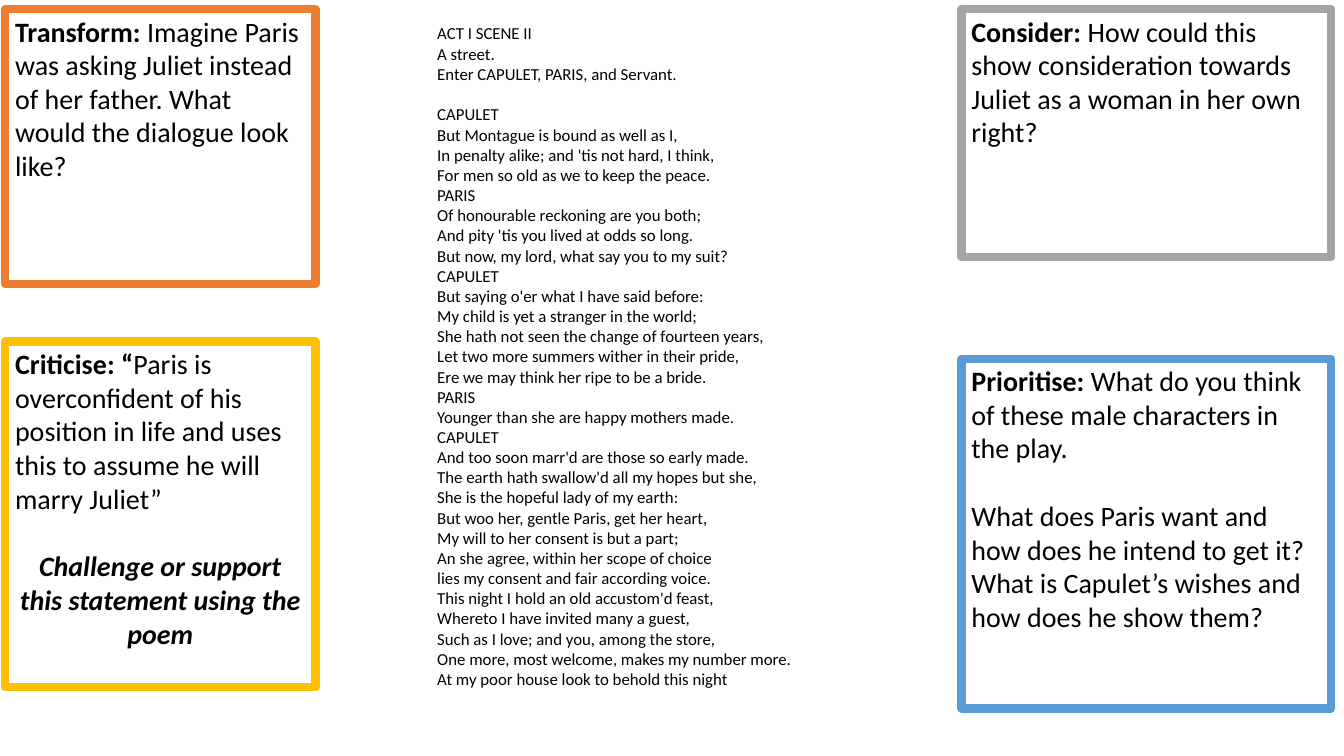
from pptx import Presentation
from pptx.dml.color import RGBColor
from pptx.enum.shapes import MSO_SHAPE
from pptx.enum.text import MSO_ANCHOR, MSO_AUTO_SIZE, PP_ALIGN
from pptx.util import Cm, Pt

COLORS = {
    "text": "000000", "paper": "FFFFFF", "transform": "ED7D31",
    "consider": "A5A5A5", "criticise": "FFC000", "prioritise": "5B9BD5",
}
FONT = "Calibri"
TASK_SIZE, SCENE_SIZE = 20, 12
LINE = 1.22  # line height of the font, in ems

# Column: left edge and width in cm
LEFT, RIGHT = (0.13, 7.82), (24.23, 9.32)

# Colour, column, top, height, heading, question, further paragraphs, closing call
TASKS = [
    ("transform", LEFT, 0.23, 6.93, "Transform: ",
     "Imagine Paris was asking Juliet instead of her father. "
     "What would the dialogue look like?", [], ""),
    ("consider", RIGHT, 0.23, 6.25, "Consider: ",
     "How could this show consideration towards Juliet as a woman "
     "in her own right?", [], ""),
    ("criticise", LEFT, 8.61, 8.71, "Criticise: “",
     "Paris is overconfident of his position in life and uses this "
     "to assume he will marry Juliet”", [],
     "Challenge or support this statement using the poem"),
    ("prioritise", RIGHT, 9.04, 8.81, "Prioritise: ",
     "What do you think of these male characters in the play.",
     ["What does Paris want and how does he intend to get it?",
      "What is Capulet’s wishes and how does he show them?"], ""),
]

SCENE_BOX = (10.77, 0.46, 9.68, 17.2)
OPENING = ["ACT I SCENE II", "A street.", "Enter CAPULET, PARIS, and Servant."]
SPEECHES = [
    ("CAPULET", [
        "But Montague is bound as well as I,",
        "In penalty alike; and 'tis not hard, I think,",
        "For men so old as we to keep the peace."]),
    ("PARIS", [
        "Of honourable reckoning are you both;",
        "And pity 'tis you lived at odds so long.",
        "But now, my lord, what say you to my suit?"]),
    ("CAPULET", [
        "But saying o'er what I have said before:",
        "My child is yet a stranger in the world;",
        "She hath not seen the change of fourteen years,",
        "Let two more summers wither in their pride,",
        "Ere we may think her ripe to be a bride."]),
    ("PARIS", ["Younger than she are happy mothers made."]),
    ("CAPULET", [
        "And too soon marr'd are those so early made.",
        "The earth hath swallow'd all my hopes but she,",
        "She is the hopeful lady of my earth:",
        "But woo her, gentle Paris, get her heart,",
        "My will to her consent is but a part;",
        "An she agree, within her scope of choice",
        "lies my consent and fair according voice.",
        "This night I hold an old accustom'd feast,",
        "Whereto I have invited many a guest,",
        "Such as I love; and you, among the store,",
        "One more, most welcome, makes my number more.",
        "At my poor house look to behold this night"]),
]


def color(name):
    return RGBColor.from_string(COLORS[name])


def add_line(frame, text, size, gap=False):
    """Add a paragraph, one empty line lower if gap is set."""
    par = frame.paragraphs[0]
    if par.runs:
        par = frame.add_paragraph()
    par.add_run().text = text
    par.alignment = PP_ALIGN.LEFT
    par.font.name = FONT
    par.font.size = Pt(size)
    par.font.color.rgb = color("text")
    if gap:
        par.space_before = Pt(size * LINE)
    return par


def set_frame(frame):
    frame.word_wrap = True
    frame.auto_size = MSO_AUTO_SIZE.NONE
    frame.vertical_anchor = MSO_ANCHOR.TOP


def add_task(slide, name, column, top, height, head, question, more, call):
    left, width = column
    box = slide.shapes.add_shape(
        MSO_SHAPE.RECTANGLE, Cm(left), Cm(top), Cm(width), Cm(height))
    box.shadow.inherit = False
    box.fill.solid()
    box.fill.fore_color.rgb = color("paper")
    box.line.color.rgb = color(name)
    box.line.width = Pt(6)
    frame = box.text_frame
    set_frame(frame)

    par = add_line(frame, head, TASK_SIZE)
    par.runs[0].font.bold = True
    par.add_run().text = question
    for i, text in enumerate(more):
        add_line(frame, text, TASK_SIZE, gap=i == 0)
    if call:
        par = add_line(frame, call, TASK_SIZE, gap=True)
        par.alignment = PP_ALIGN.CENTER
        par.font.bold = par.font.italic = True


def add_scene(slide):
    box = slide.shapes.add_textbox(*map(Cm, SCENE_BOX))
    frame = box.text_frame
    set_frame(frame)
    for text in OPENING:
        add_line(frame, text, SCENE_SIZE)
    for i, (speaker, verses) in enumerate(SPEECHES):
        add_line(frame, speaker, SCENE_SIZE, gap=i == 0)
        for verse in verses:
            add_line(frame, verse, SCENE_SIZE)


def main():
    deck = Presentation()
    deck.slide_width, deck.slide_height = Cm(33.87), Cm(19.05)
    slide = deck.slides.add_slide(deck.slide_layouts[6])
    for task in TASKS:
        add_task(slide, *task)
    add_scene(slide)
    deck.save("out.pptx")


if __name__ == "__main__":
    main()
